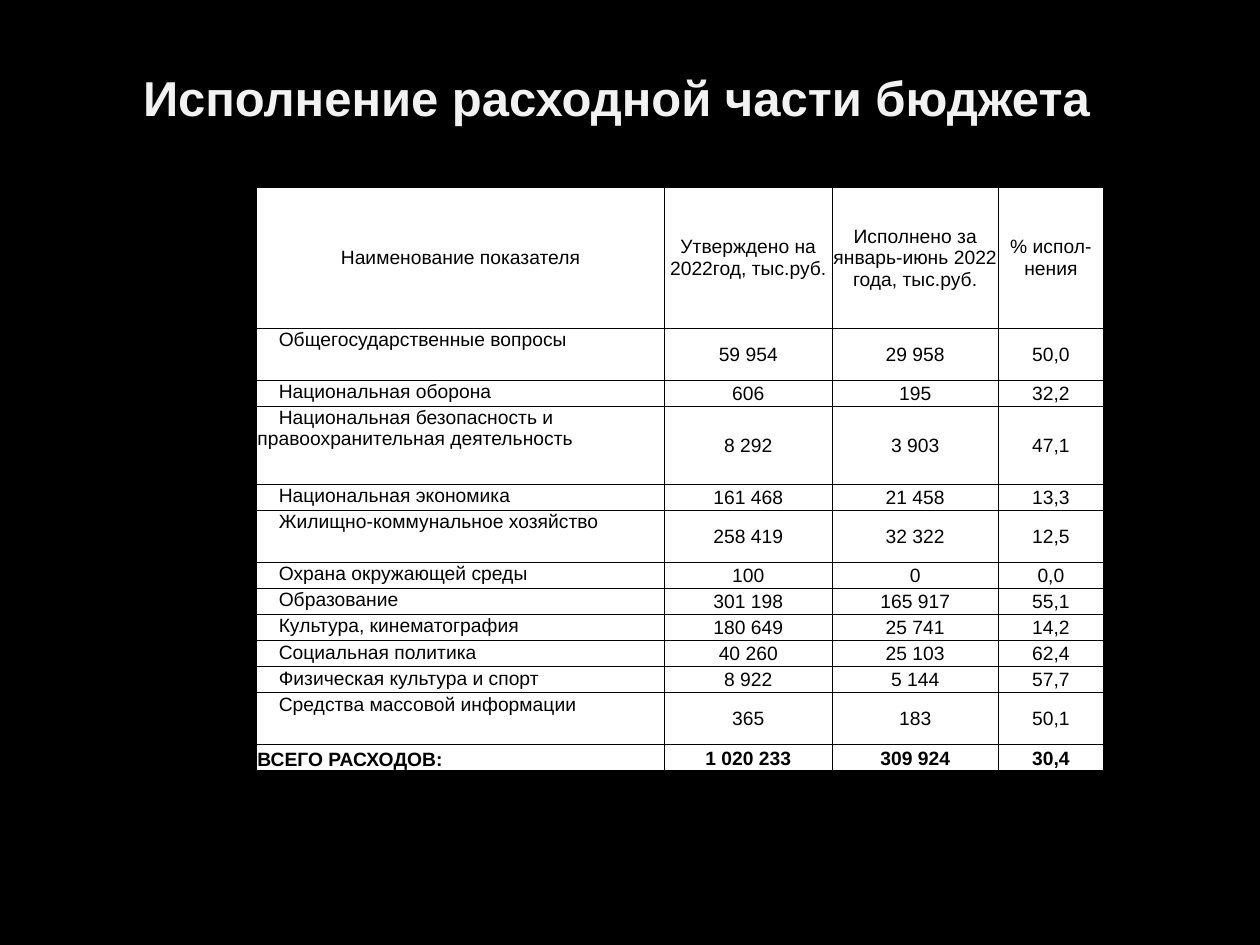
from lxml.etree import SubElement
from pptx import Presentation
from pptx.dml.color import RGBColor
from pptx.enum.text import MSO_ANCHOR, PP_ALIGN
from pptx.oxml.ns import qn
from pptx.util import Cm, Pt

HEADERS = ["Наименование показателя", "Утверждено на 2022год, тыс.руб.",
           "Исполнено за январь-июнь 2022 года, тыс.руб.", "% испол-нения"]
EXPENSES = [
    (2, "Общегосударственные вопросы", "59 954", "29 958", "50,0"),
    (1, "Национальная оборона", "606", "195", "32,2"),
    (3, "Национальная безопасность и правоохранительная деятельность",
     "8 292", "3 903", "47,1"),
    (1, "Национальная экономика", "161 468", "21 458", "13,3"),
    (2, "Жилищно-коммунальное хозяйство", "258 419", "32 322", "12,5"),
    (1, "Охрана окружающей среды", "100", "0", "0,0"),
    (1, "Образование", "301 198", "165 917", "55,1"),
    (1, "Культура, кинематография", "180 649", "25 741", "14,2"),
    (1, "Социальная политика", "40 260", "25 103", "62,4"),
    (1, "Физическая культура и спорт", "8 922", "5 144", "57,7"),
    (2, "Средства массовой информации", "365", "183", "50,1"),
]
TOTAL = ["ВСЕГО РАСХОДОВ:", "1 020 233", "309 924", "30,4"]
COLUMN_WIDTHS = [8.23, 3.37, 3.36, 2.11]
HEADER_HEIGHT = Cm(2.84)
BODY_HEIGHT = Cm(8.94)


def color(value):
    return RGBColor.from_string(value)


def style_paragraph(p, size, rgb, align, bold=False):
    p.alignment = align
    p.font.name = "Arial"
    p.font.size = Pt(size)
    p.font.bold = bold
    p.font.color.rgb = color(rgb)


def add_title(s, text):
    sp = s.shapes.add_textbox(Cm(1.27), Cm(0.74), Cm(22.86), Cm(2.44))
    tf = sp.text_frame
    tf.word_wrap = True
    tf.vertical_anchor = MSO_ANCHOR.MIDDLE
    tf.margin_right = Cm(0.8)
    p = tf.paragraphs[0]
    p.text = text
    style_paragraph(p, 28, "F2F2F2", PP_ALIGN.CENTER, True)


def add_borders(cell, rgb, width):
    tcPr = cell._tc.get_or_add_tcPr()
    for i, side in enumerate(("lnL", "lnR", "lnT", "lnB")):
        ln = tcPr.makeelement(qn(f"a:{side}"), {"w": str(Pt(width))})
        fill = SubElement(ln, qn("a:solidFill"))
        SubElement(fill, qn("a:srgbClr"), val=rgb)
        tcPr.insert(i, ln)


def fill_cell(cell, text, align, anchor, bold=False, indent=0):
    cell.fill.solid()
    cell.fill.fore_color.rgb = color("FFFFFF")
    cell.margin_left = cell.margin_right = cell.margin_top = Cm(0.02)
    cell.margin_bottom = 0
    cell.vertical_anchor = anchor
    p = cell.text_frame.paragraphs[0]
    p.text = text
    style_paragraph(p, 11, "000000", align, bold)
    if indent:
        pPr = p._p.get_or_add_pPr()
        pPr.set("marL", "0")
        pPr.set("indent", str(indent))
    add_borders(cell, "000000", 0.5)


def fill_row(cells, texts, name_align, name_anchor, bold=False, indent=0):
    name, *values = cells
    fill_cell(name, texts[0], name_align, name_anchor, bold, indent)
    for cell, text in zip(values, texts[1:]):
        fill_cell(cell, text, PP_ALIGN.CENTER, MSO_ANCHOR.MIDDLE, bold)


def add_budget_table(s):
    units = [row[0] for row in EXPENSES] + [1]
    frame = s.shapes.add_table(len(units) + 1, len(HEADERS), Cm(5.17), Cm(3.77),
                               Cm(sum(COLUMN_WIDTHS)), HEADER_HEIGHT + BODY_HEIGHT)
    table = frame.table
    for column, width in zip(table.columns, COLUMN_WIDTHS):
        column.width = Cm(width)
    header, *body = table.rows
    header.height = HEADER_HEIGHT
    for row, unit in zip(body, units):
        row.height = BODY_HEIGHT * unit // sum(units)

    fill_row(header.cells, HEADERS, PP_ALIGN.CENTER, MSO_ANCHOR.MIDDLE)
    for row, (_, *texts) in zip(body, EXPENSES):
        fill_row(row.cells, texts, PP_ALIGN.LEFT, MSO_ANCHOR.TOP, indent=Cm(0.43))
    fill_row(body[-1].cells, TOTAL, PP_ALIGN.LEFT, MSO_ANCHOR.BOTTOM, bold=True)


def main():
    prs = Presentation()
    prs.slide_width = Cm(25.4)
    prs.slide_height = Cm(19.05)
    s = prs.slides.add_slide(prs.slide_layouts[6])
    s.background.fill.solid()
    s.background.fill.fore_color.rgb = color("000000")
    add_title(s, "Исполнение расходной части бюджета")
    add_budget_table(s)
    prs.save("out.pptx")


if __name__ == "__main__":
    main()
